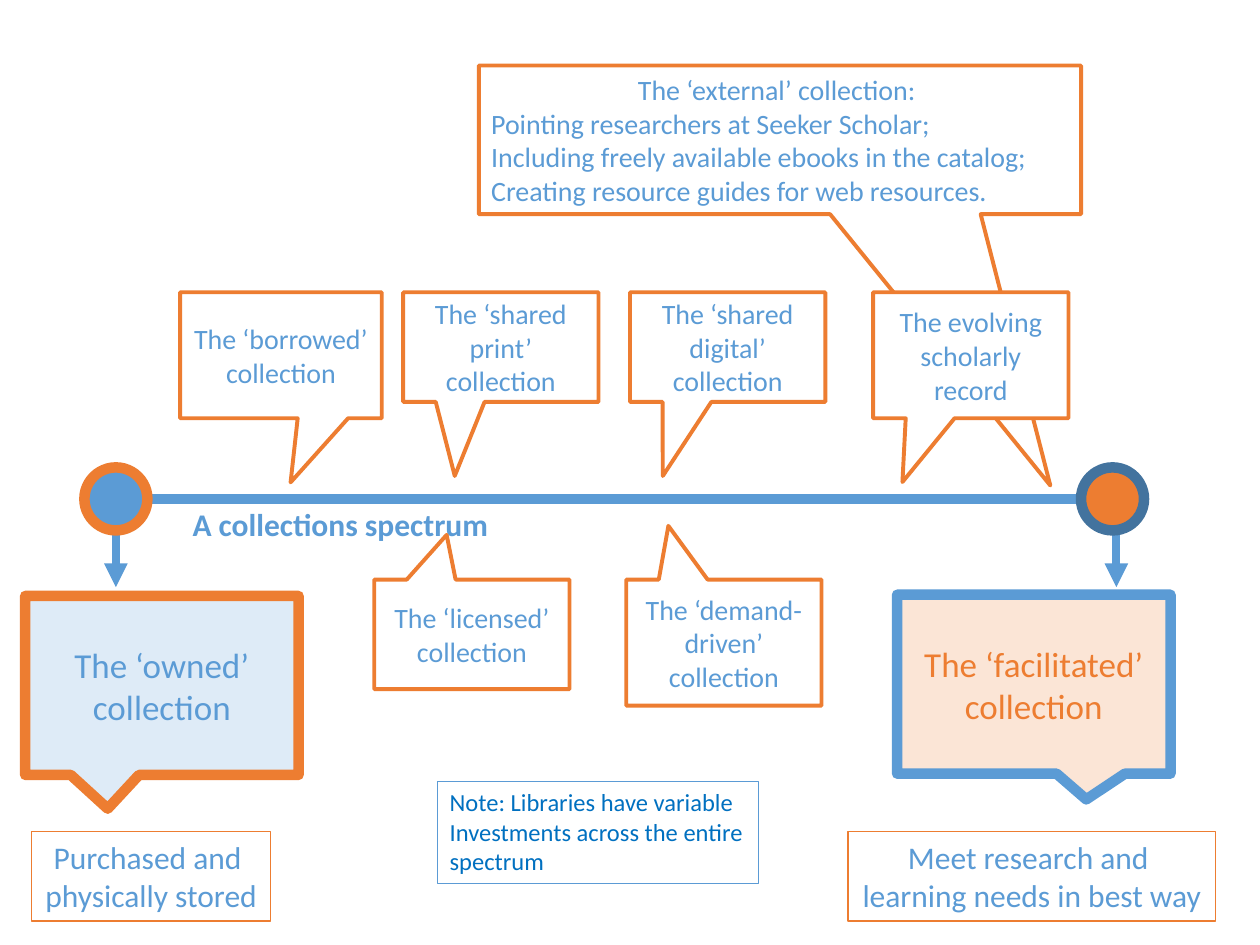
from pptx import Presentation
from pptx.dml.color import RGBColor
from pptx.enum.shapes import MSO_CONNECTOR, MSO_SHAPE
from pptx.enum.text import MSO_ANCHOR, MSO_AUTO_SIZE, PP_ALIGN
from pptx.oxml.ns import qn
from pptx.util import Inches, Pt
from lxml.etree import SubElement

COLS, ROWS = 100, 75
BLUE, ORANGE, WHITE = "5B9BD5", "ED7D31", "FFFFFF"
NAVY, DEEP, PALE, PEACH = "43739E", "0070C0", "DEEBF7", "FBE5D6"
LEFT, MID = PP_ALIGN.LEFT, PP_ALIGN.CENTER


def paint(code):
    """Turn a hex string into a colour."""
    return RGBColor.from_string(code)


def apply(item, form):
    """Set each attribute named in a dict."""
    for name, value in form.items():
        setattr(item, name, value)


class Board:
    """Style and current slide, measured in columns and rows."""

    def __init__(self, deck):
        """Add a blank slide to the deck."""
        self.slide = deck.slides.add_slide(deck.slide_layouts[6])
        self.wide = deck.slide_width / COLS
        self.high = deck.slide_height / ROWS
        self.font = "Calibri"

    def place(self, *spots):
        """Scale alternating columns and rows to lengths."""
        units = (self.wide, self.high) * 2
        return [round(spot * unit) for spot, unit in zip(spots, units)]

    def letter(self, shape, lines, size, hue, aligns=(MID,), bold=False, **frame):
        """Fill a shape with paragraphs; the last alignment carries on."""
        apply(shape.text_frame, {"word_wrap": True, **frame})
        for i, line in enumerate(lines):
            para = shape.text_frame.paragraphs[0] if i == 0 else shape.text_frame.add_paragraph()
            apply(para, {"text": line, "alignment": aligns[min(i, len(aligns) - 1)]})
            for run in para.runs:
                apply(run.font, {"name": self.font, "size": Pt(size), "bold": bold})
                run.font.color.rgb = paint(hue)

    def shape(self, kind, spot, fill, edge, width):
        """Draw a preset shape."""
        shape = self.slide.shapes.add_shape(kind, *self.place(*spot))
        shape.shadow.inherit = False
        if fill:
            shape.fill.solid()
            shape.fill.fore_color.rgb = paint(fill)
        else:
            shape.fill.background()
        shape.line.color.rgb = paint(edge)
        shape.line.width = Pt(width)
        return shape

    def bubble(self, spot, tip, lines, fill=WHITE, edge=ORANGE, width=2.25,
               size=16, hue=BLUE, aligns=(MID,)):
        """Draw a callout with its tip at shares of its own size."""
        shape = self.shape(MSO_SHAPE.RECTANGULAR_CALLOUT, spot, fill, edge, width)
        for i, share in enumerate(tip):
            shape.adjustments[i] = share
        self.letter(shape, lines, size, hue, aligns, vertical_anchor=MSO_ANCHOR.MIDDLE)

    def panel(self, spot, lines, edge, size, hue, align=MID):
        """Draw a thin framed note."""
        shape = self.shape(MSO_SHAPE.RECTANGLE, spot, None, edge, 0.75)
        self.letter(shape, lines, size, hue, (align,), word_wrap=False,
                    auto_size=MSO_AUTO_SIZE.SHAPE_TO_FIT_TEXT,
                    vertical_anchor=MSO_ANCHOR.TOP)

    def label(self, spot, text, size, hue):
        """Add a bold label."""
        box = self.slide.shapes.add_textbox(*self.place(*spot))
        self.letter(box, [text], size, hue, (LEFT,), True,
                    auto_size=MSO_AUTO_SIZE.SHAPE_TO_FIT_TEXT)

    def line(self, ends, width, arrow=False):
        """Draw a straight line, with an arrowhead if asked."""
        line = self.slide.shapes.add_connector(MSO_CONNECTOR.STRAIGHT, *self.place(*ends))
        line.line.color.rgb = paint(BLUE)
        line.line.width = Pt(width)
        form = line._element.spPr
        if arrow:
            SubElement(form.find(qn("a:ln")), qn("a:tailEnd"), type="triangle")
        SubElement(form, qn("a:effectLst"))


def main():
    """Build the collections spectrum slide."""
    deck = Presentation()
    apply(deck, {"slide_width": Inches(10), "slide_height": Inches(7.5)})
    board = Board(deck)

    board.bubble((38, 5.2, 47.8, 11.8), (0.449, 2.325),
                 ["The ‘external’ collection: ",
                  "Pointing researchers at Seeker Scholar;",
                  "Including freely available ebooks in the catalog;",
                  "Creating resource guides for web resources."],
                 aligns=(MID, LEFT))

    for x, top in ((9.2, 42), (88.6, 41.6)):
        board.line((x, top, x, 46.6), 4.5, True)
    board.line((11.7, 39.6, 85.8, 39.6), 6)
    for x, fill, edge in ((85.8, ORANGE, NAVY), (6.7, BLUE, ORANGE)):
        board.shape(MSO_SHAPE.OVAL, (x, 37.1, 5, 5), fill, edge, 6)

    for x, y, tip, word, fill, edge, hue in (
            (2, 47.3, (-0.198, 0.689), "owned", PALE, ORANGE, BLUE),
            (71.2, 47.2, (0.192, 0.644), "facilitated", PEACH, BLUE, ORANGE)):
        board.bubble((x, y, 21.7, 14.2), tip, [f"The ‘{word}’ collection"],
                     fill, edge, 6, 20, hue)

    board.label((14.3, 39.6, 28.3, 4), "A collections spectrum", 18, BLUE)

    above, below = 23.2, 46
    for x, y, wide, high, tip, text in (
            (14.3, above, 16, 10, (0.048, 1.009), "The ‘borrowed’ collection"),
            (32, above, 15.5, 8.7, (-0.236, 1.176), "The ‘shared print’ collection"),
            (50, above, 15.5, 8.7, (-0.332, 1.176), "The ‘shared digital’ collection"),
            (69.3, above, 15.5, 10, (-0.35, 1.006), "The evolving scholarly record"),
            (29.7, below, 15.5, 8.7, (-0.129, -0.908), "The ‘licensed’ collection"),
            (49.7, below, 15.5, 10, (-0.284, -0.926), "The ‘demand-driven’ collection")):
        board.bubble((x, y, wide, high), tip, [text])

    board.panel((2.5, 66, 19, 7.1), ["Purchased and \nphysically stored"], ORANGE, 18, BLUE)
    board.panel((67.3, 66, 29.2, 7.1),
                ["Meet research and ", "learning needs in best way"], ORANGE, 18, BLUE)
    board.panel((34.7, 62, 25.5, 8.1),
                ["Note: Libraries have variable", "Investments across the entire", "spectrum"],
                BLUE, 14, DEEP, LEFT)

    deck.save("out.pptx")


if __name__ == "__main__":
    main()
